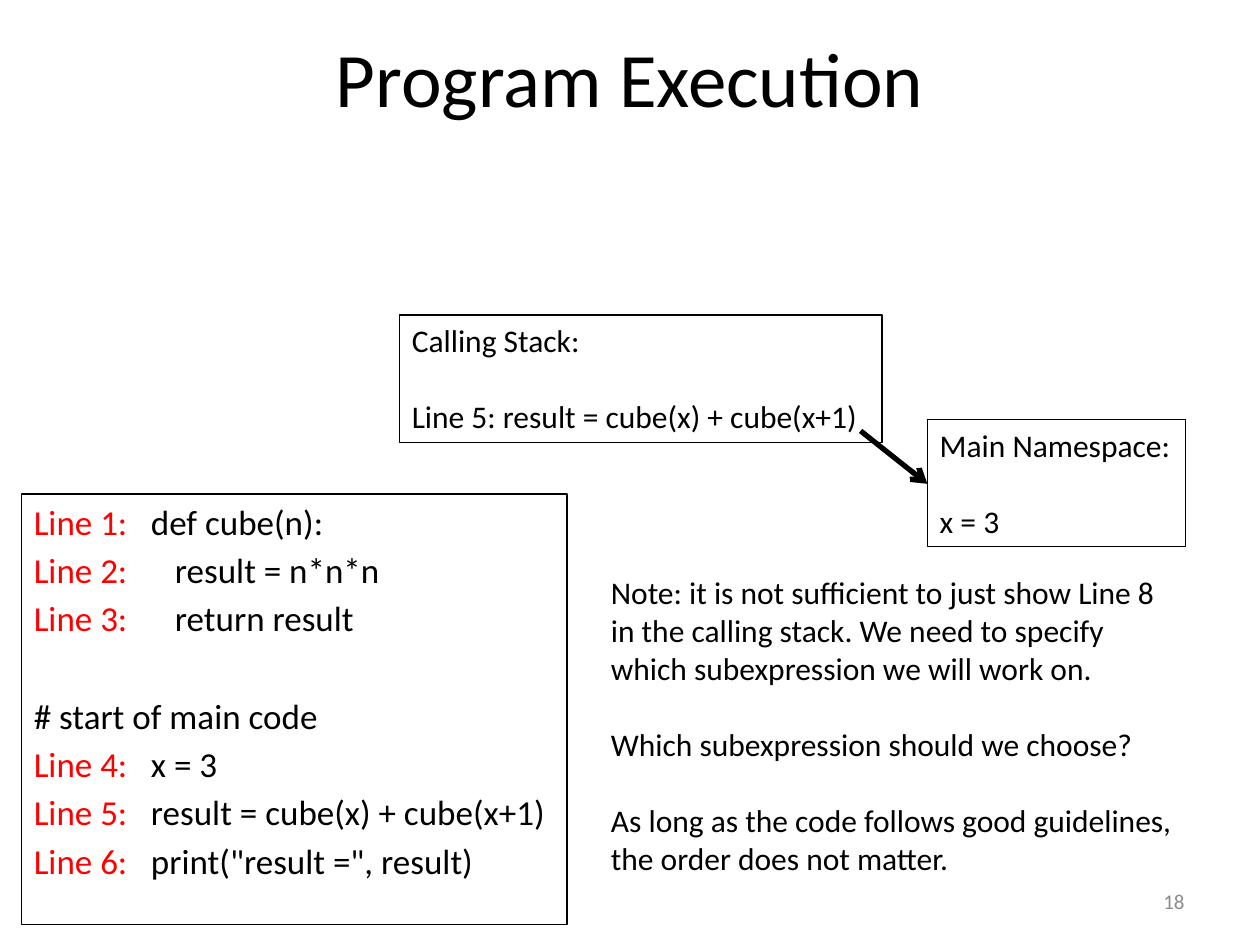
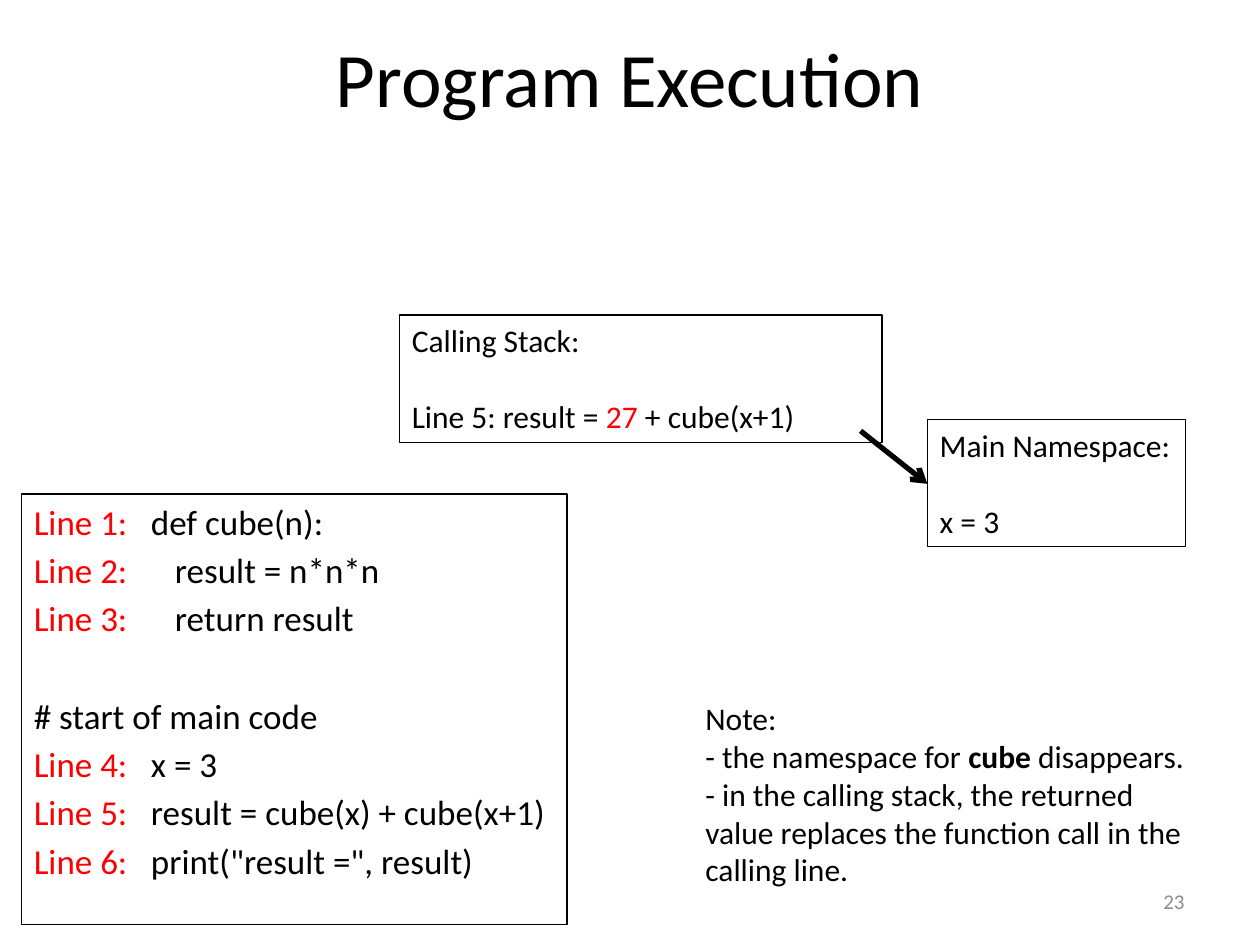
from lxml import etree
from pptx import Presentation
from pptx.dml.color import RGBColor
from pptx.enum import shapes, text
from pptx.oxml import ns
from pptx.util import Inches, Pt

BLACK = RGBColor(0x00, 0x00, 0x00)
RED = RGBColor(0xFF, 0x00, 0x00)
GRAY = RGBColor(0x8C, 0x8C, 0x8C)
FONT = "Calibri"
BODY_SIZE = 18
CODE_SIZE = 20
BLANK_LINE = 22
CODE_SPACING = 3.6
CODE_GAP = 31.6
CODE_TAB = 0.93
NESTED_TAB = 1.12

CODE = [
    ("Line 1:", "def cube(n):", CODE_TAB, 0),
    ("Line 2:", "result = n*n*n", NESTED_TAB, CODE_SPACING),
    ("Line 3:", "return result", NESTED_TAB, CODE_SPACING),
    ("", "# start of main code", None, CODE_GAP),
    ("Line 4:", "x = 3", CODE_TAB, CODE_SPACING),
    ("Line 5:", "result = cube(x) + cube(x+1)", CODE_TAB, CODE_SPACING),
    ("Line 6:", "print(\"result =\", result)", CODE_TAB, CODE_SPACING),
]


class Slides:
    def __init__(self):
        self.deck = Presentation()
        self.deck.slide_width = Inches(10)
        self.deck.slide_height = Inches(7.5)
        self.page = None

    def new_page(self, title, number):
        self.page = self.deck.slides.add_slide(self.deck.slide_layouts[6])
        heading = self.box(0.5, 0.17, 9, 0.88, anchor=text.MSO_ANCHOR.MIDDLE)
        self.paragraph(heading, [title], size=44, align=text.PP_ALIGN.CENTER)
        footer = self.box(7.17, 6.95, 2.33, 0.4, anchor=text.MSO_ANCHOR.MIDDLE)
        self.paragraph(footer, [str(number)], size=12, color=GRAY,
                       align=text.PP_ALIGN.RIGHT)

    def box(self, left, top, width, height, framed=False,
            anchor=text.MSO_ANCHOR.TOP):
        box = self.page.shapes.add_textbox(
            Inches(left), Inches(top), Inches(width), Inches(height))
        box.text_frame.word_wrap = True
        box.text_frame.vertical_anchor = anchor
        if framed:
            box.line.color.rgb = BLACK
            box.line.width = Pt(0.75)
        return box

    def paragraph(self, box, spans, size=BODY_SIZE, color=BLACK, before=0,
                  align=text.PP_ALIGN.LEFT):
        frame = box.text_frame
        para = frame.paragraphs[0]
        if para.runs:
            para = frame.add_paragraph()
        para.alignment = align
        para.space_before = Pt(before)
        para.font.name = FONT
        para.font.size = Pt(size)
        para.font.color.rgb = color
        for item in spans:
            if item == "\n":
                para.add_line_break()
                continue
            words, style = item if isinstance(item, tuple) else (item, None)
            span = para.add_run()
            span.text = words
            if style == "bold":
                span.font.bold = True
            elif style is not None:
                span.font.color.rgb = style
        return para

    def code(self):
        listing = self.box(0.17, 3.92, 4.33, 3.42, framed=True)
        for label, source, tab, before in CODE:
            spans = [(label, RED), "\t" + source] if label else [source]
            para = self.paragraph(listing, spans, CODE_SIZE, before=before)
            if tab:
                self.tab_stop(para, tab)

    def tab_stop(self, para, position):
        properties = para.font._element.getparent()
        stops = etree.Element(ns.qn("a:tabLst"))
        etree.SubElement(stops, ns.qn("a:tab"),
                         pos=str(Inches(position)), algn="l")
        properties.find(ns.qn("a:defRPr")).addprevious(stops)

    def panel(self, left, top, width, heading, spans):
        panel = self.box(left, top, width, 1.01, framed=True)
        self.paragraph(panel, [heading])
        self.paragraph(panel, spans, before=BLANK_LINE)

    def arrow(self, start, end):
        arrow = self.page.shapes.add_connector(
            shapes.MSO_CONNECTOR.STRAIGHT,
            *(Inches(value) for value in start + end))
        arrow.line.color.rgb = BLACK
        arrow.line.width = Pt(3)
        etree.SubElement(arrow.line._get_or_add_ln(),
                         ns.qn("a:tailEnd"), type="arrow")
        etree.SubElement(arrow._element.spPr, ns.qn("a:effectLst"))

    def execution_page(self, number, call, note_place, notes):
        self.new_page("Program Execution", number)
        self.code()
        self.panel(7.36, 3.33, 2.05, "Main Namespace:", ["x = 3"])
        self.panel(3.17, 2.5, 3.83, "Calling Stack:",
                   ["Line 5: result = "] + call)
        self.arrow((6.83, 3.42), (7.36, 3.84))
        note = self.box(*note_place)
        for spans, before in notes:
            self.paragraph(note, spans, before=before)


def main():
    slides = Slides()
    slides.execution_page(
        18, ["cube(x) + cube(x+1)"], (4.75, 4.5, 4.71, 2.52), [
            (["Note: it is not sufficient to just show Line 8", "\n",
              "in the calling stack. We need to specify"], 0),
            (["which subexpression we will work on."], 0),
            (["Which subexpression should we choose?"], BLANK_LINE),
            (["As long as the code follows good guidelines,", "\n",
              "the order does not matter."], BLANK_LINE),
        ])
    slides.execution_page(
        23, [("27 ", RED), "+ cube(x+1)"], (5.5, 5.5, 4.09, 1.62), [
            (["Note:"], 0),
            (["- the namespace for ", ("cube ", "bold"), "disappears."], 0),
            (["- in the calling stack, the returned", "\n",
              "value replaces the function call in the"], 0),
            (["calling line."], 0),
        ])
    slides.deck.save("out.pptx")


if __name__ == "__main__":
    main()
